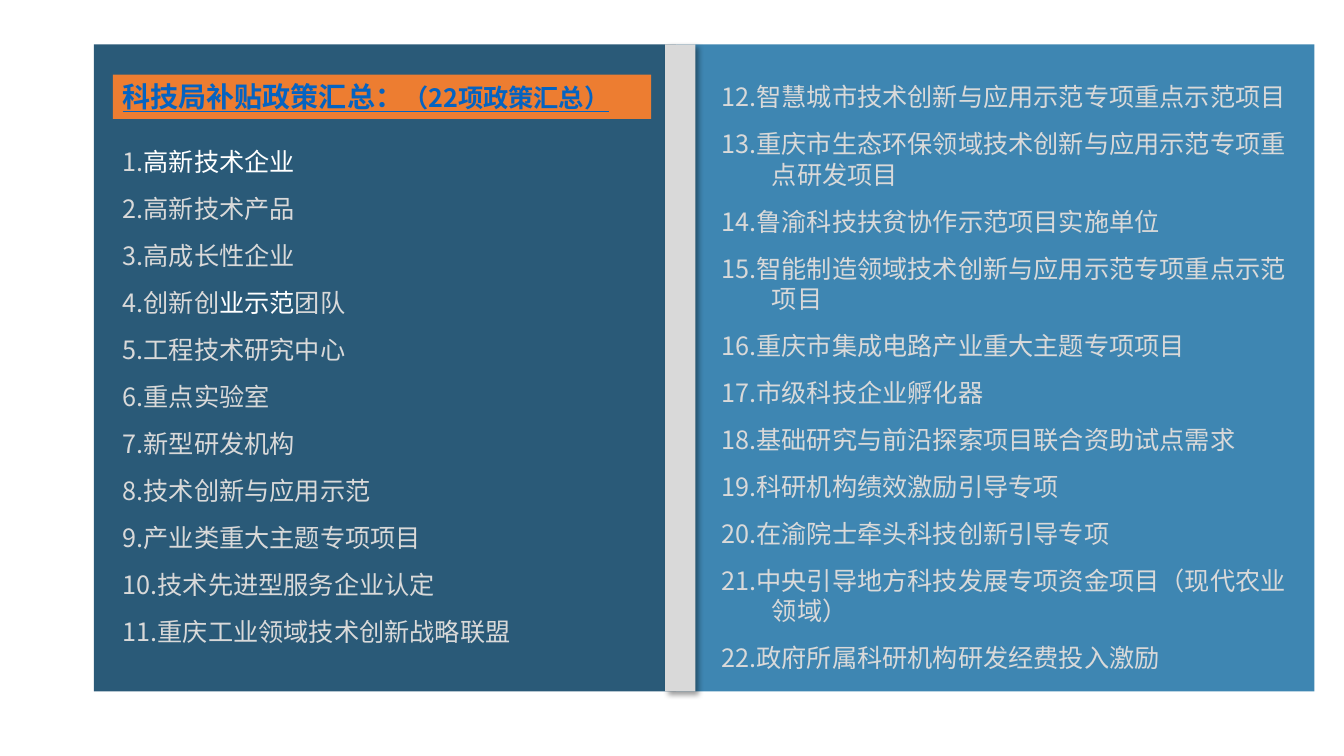
from lxml.etree import SubElement
from pptx import Presentation
from pptx.dml.color import RGBColor
from pptx.enum.shapes import MSO_SHAPE
from pptx.enum.text import MSO_ANCHOR, PP_ALIGN
from pptx.oxml.ns import qn
from pptx.util import Pt

NAVY = RGBColor(0x2A, 0x5A, 0x78)
BLUE = RGBColor(0x3E, 0x86, 0xB2)
GREY = RGBColor(0xD9, 0xD9, 0xD9)
ORANGE = RGBColor(0xED, 0x7D, 0x31)
LINK_BLUE = RGBColor(0x05, 0x63, 0xC1)
WHITE = RGBColor(0xFF, 0xFF, 0xFF)
FONT = "Noto Sans CJK SC"

LEFT_POLICIES = [
    [("1.", GREY), ("高新技术企业", WHITE)],
    [("2.高新技术产品", GREY)],
    [("3.高成长性企业", GREY)],
    [("4.创新创", GREY), ("业示范", WHITE), ("团队", GREY)],
    [("5.工程技术研究中心", GREY)],
    [("6.重点实验室", GREY)],
    [("7.新型研发机构", GREY)],
    [("8.技术创新与应用示范", GREY)],
    [("9.产业类重大主题专项项目", GREY)],
    [("10.技术先进型服务企业认定", GREY)],
    [("11.重庆工业领域技术创新战略联盟", GREY)],
]
RIGHT_POLICIES = [[(policy, GREY)] for policy in (
    "12.智慧城市技术创新与应用示范专项重点示范项目",
    "13.重庆市生态环保领域技术创新与应用示范专项重点研发项目",
    "14.鲁渝科技扶贫协作示范项目实施单位",
    "15.智能制造领域技术创新与应用示范专项重点示范项目",
    "16.重庆市集成电路产业重大主题专项项目",
    "17.市级科技企业孵化器",
    "18.基础研究与前沿探索项目联合资助试点需求",
    "19.科研机构绩效激励引导专项",
    "20.在渝院士牵头科技创新引导专项",
    "21.中央引导地方科技发展专项资金项目（现代农业领域）",
    "22.政府所属科研机构研发经费投入激励",
)]


def add_panel(left, top, width, height, color):
    panel = slide.shapes.add_shape(
        MSO_SHAPE.RECTANGLE, Pt(left), Pt(top), Pt(width), Pt(height))
    panel.shadow.inherit = False
    panel.fill.solid()
    panel.fill.fore_color.rgb = color
    panel.line.fill.background()
    return panel


def write_lines(frame, lines, size):
    frame.word_wrap = True
    frame.vertical_anchor = MSO_ANCHOR.TOP
    for index, pieces in enumerate(lines):
        line = frame.add_paragraph() if index else frame.paragraphs[0]
        line.alignment = PP_ALIGN.LEFT
        line.space_before = Pt(12)
        line.line_spacing = Pt(size * 1.2)
        line.font.size = Pt(size)
        line.font.name = FONT
        indent = line._p.get_or_add_pPr()
        indent.set("marL", str(Pt(36)))
        indent.set("indent", str(Pt(-36)))
        for text, color in pieces:
            piece = line.add_run()
            piece.text = text
            piece.font.name = FONT
            piece.font.size = Pt(size)
            piece.font.color.rgb = color
            SubElement(piece._r.get_or_add_rPr(), qn("a:ea"), typeface=FONT)


deck = Presentation()
deck.slide_width, deck.slide_height = Pt(960), Pt(540)
slide = deck.slides.add_slide(deck.slide_layouts[6])

add_panel(67, 31.7, 416.2, 462.2, NAVY)
add_panel(483.1, 31.7, 455.8, 462.2, BLUE)
spine = add_panel(475.2, 31.7, 21.6, 462.2, GREY)
spine_shadow = SubElement(
    spine._element.spPr.find(qn("a:effectLst")), qn("a:outerShdw"),
    blurRad=str(Pt(4)), dist=str(Pt(3)), dir="2700000", rotWithShape="0")
shadow_color = SubElement(spine_shadow, qn("a:srgbClr"), val="000000")
SubElement(shadow_color, qn("a:alpha"), val="40000")

for left, top, width, height, policies in (
        (80.6, 99.4, 358.6, 368.6, LEFT_POLICIES),
        (508.3, 53.3, 430.6, 433.4, RIGHT_POLICIES)):
    column = slide.shapes.add_textbox(Pt(left), Pt(top), Pt(width), Pt(height))
    column.text_frame.margin_top = Pt(5)
    write_lines(column.text_frame, policies, 18)

heading = add_panel(80.6, 53.3, 384.5, 31.7, ORANGE)
write_lines(heading.text_frame, [
    [("科技局补贴政策汇总：", LINK_BLUE), ("（22项政策汇总）", LINK_BLUE)]], 20)
heading_line = heading.text_frame.paragraphs[0]
for piece in heading_line.runs:
    piece.font.bold = True
    piece.font.underline = True
heading_line.runs[1].font.size = Pt(18)

deck.save("out.pptx")
